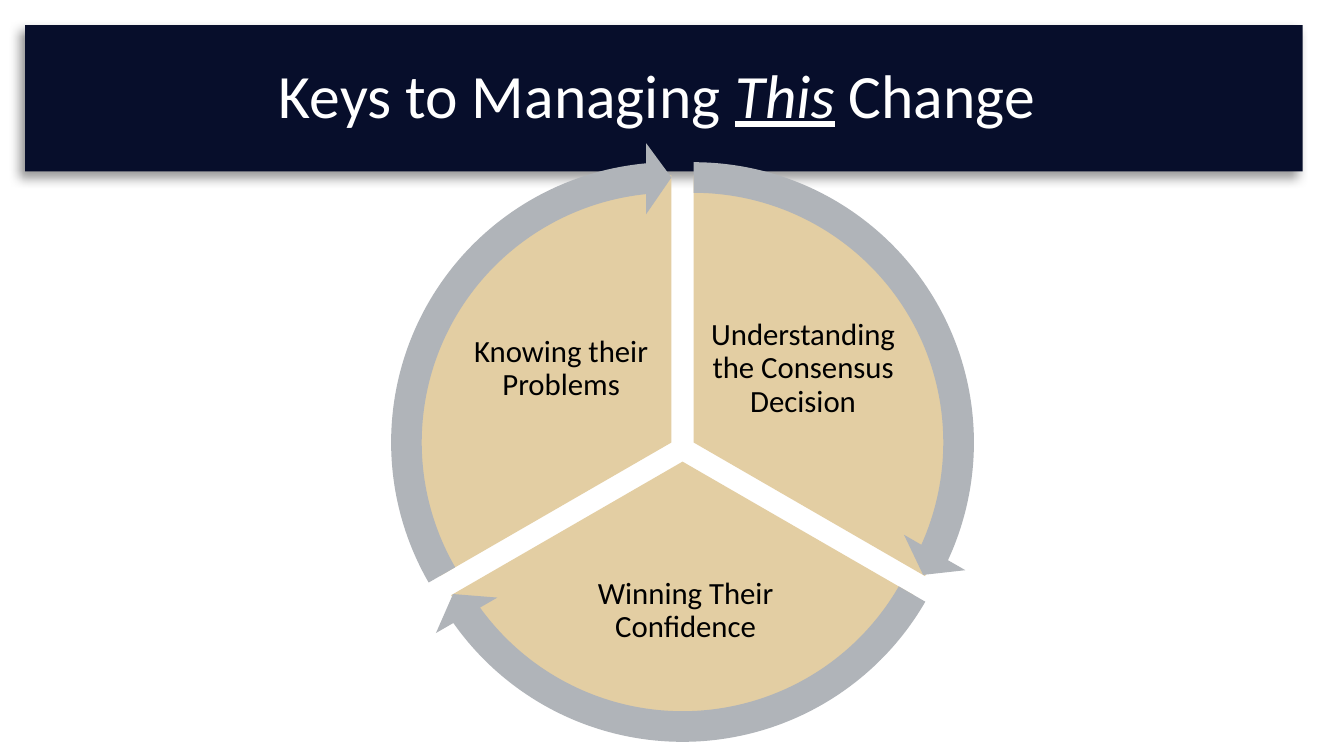
import pptx
import pptx.dml.color
import pptx.enum.shapes
import pptx.enum.text
import pptx.util
from lxml import etree
from pptx.util import Inches

RGBColor = pptx.dml.color.RGBColor
MSO_SHAPE = pptx.enum.shapes.MSO_SHAPE
NAVY = RGBColor(0x07, 0x0E, 0x2B)
SAND = RGBColor(0xE3, 0xCE, 0xA3)
GREY = RGBColor(0xB0, 0xB4, 0xB9)
WHITE = RGBColor(0xFF, 0xFF, 0xFF)
BLACK = RGBColor(0x00, 0x00, 0x00)

FONT = "Calibri"
PIE_SIZE = 5.3
ARROW_SIZE = 5.96
ARROW_MARGIN = (ARROW_SIZE - PIE_SIZE) / 2
HEAD_ANGLE = 3.275  # angles are in units of 5/3 degree

FRAME_FORMAT = {
    "word_wrap": True,
    "auto_size": pptx.enum.text.MSO_AUTO_SIZE.NONE,
    "vertical_anchor": pptx.enum.text.MSO_ANCHOR.MIDDLE,
}
PARAGRAPH_FORMAT = {
    "alignment": pptx.enum.text.PP_ALIGN.CENTER,
    "line_spacing": 0.9,
}
LABEL_MARGINS = {
    f"margin_{side}": Inches(0.03) for side in ("left", "top", "right", "bottom")
}

# Segment left, top, start angle, end angle, label, label box
SEGMENTS = [
    (4.23, 1.74, 162, 18, "Understanding the Consensus Decision",
     (7.02, 2.87, 1.89, 1.58)),
    (4.12, 1.93, 18, 90, "Winning Their Confidence",
     (5.38, 5.37, 2.84, 1.39)),
    (4.01, 1.74, 90, 162, "Knowing their Problems",
     (4.62, 2.87, 1.89, 1.58)),
]


def apply_format(target, values):
    for attribute, value in values.items():
        setattr(target, attribute, value)


def add_run(paragraph, text, size, color, **emphasis):
    run = paragraph.add_run()
    run.text = text
    apply_format(run.font, {"name": FONT, "size": pptx.util.Pt(size), **emphasis})
    run.font.color.rgb = color


def add_shadow(shape):
    namespace = "http://schemas.openxmlformats.org/drawingml/2006/main"
    shape._element.spPr.append(etree.fromstring(
        f'<a:effectLst xmlns:a="{namespace}">'
        '<a:outerShdw blurRad="101600" dist="76200" dir="8100000" '
        'algn="tr" rotWithShape="0">'
        '<a:srgbClr val="000000"><a:alpha val="40000"/></a:srgbClr>'
        '</a:outerShdw></a:effectLst>'))


def format_title(title):
    apply_format(title, {"left": Inches(0.25), "top": Inches(0.25),
                         "width": Inches(12.67), "height": Inches(1.45)})
    title.fill.solid()
    title.fill.fore_color.rgb = NAVY
    add_shadow(title)
    apply_format(title.text_frame, FRAME_FORMAT)
    heading = title.text_frame.paragraphs[0]
    apply_format(heading, PARAGRAPH_FORMAT)
    add_run(heading, "Keys to Managing ", 44, WHITE)
    add_run(heading, "This", 44, WHITE, italic=True, underline=True)
    add_run(heading, " Change ", 44, WHITE)


def add_round_shape(cycle, preset, left, top, size, adjustments, color):
    shape = cycle.shapes.add_shape(
        preset, Inches(left), Inches(top), Inches(size), Inches(size))
    for index, value in enumerate(adjustments):
        shape.adjustments[index] = value
    shape.fill.solid()
    shape.fill.fore_color.rgb = color
    shape.line.fill.background()
    shape.shadow.inherit = False


def add_label(cycle, text, box):
    frame = cycle.shapes.add_textbox(*map(Inches, box)).text_frame
    apply_format(frame, {**FRAME_FORMAT, **LABEL_MARGINS})
    apply_format(frame.paragraphs[0], PARAGRAPH_FORMAT)
    add_run(frame.paragraphs[0], text, 22, BLACK)


def main():
    deck = pptx.Presentation()
    apply_format(deck, {"slide_width": Inches(13.33), "slide_height": Inches(7.5)})
    slide = deck.slides.add_slide(deck.slide_layouts[5])

    # Title banner
    format_title(slide.shapes.title)

    # Pie segments with their labels
    cycle = slide.shapes.add_group_shape()
    for left, top, start, end, label, box in SEGMENTS:
        add_round_shape(cycle, MSO_SHAPE.PIE, left, top, PIE_SIZE,
                        (start, end), SAND)
        add_label(cycle, label, box)

    # Arrows around the segments
    for left, top, start, end, _, _ in SEGMENTS:
        add_round_shape(cycle, MSO_SHAPE.CIRCULAR_ARROW,
                        left - ARROW_MARGIN, top - ARROW_MARGIN, ARROW_SIZE,
                        (0.051, HEAD_ANGLE, end - HEAD_ANGLE, start, 0.059), GREY)

    deck.save("out.pptx")


if __name__ == "__main__":
    main()
